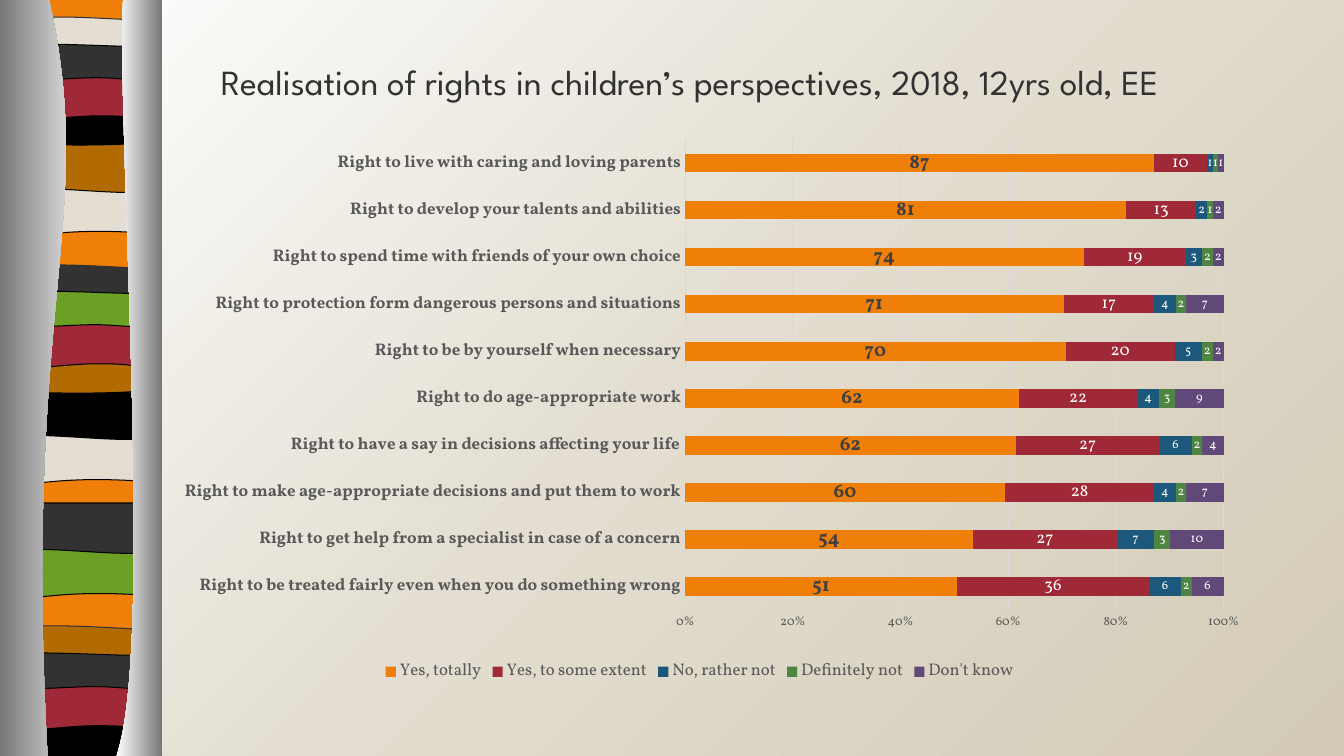
import pptx
import pptx.chart.data
import pptx.dml.color
import pptx.enum.chart
import pptx.enum.shapes
import pptx.enum.text
import pptx.oxml
import pptx.oxml.ns
import pptx.util

Pt = pptx.util.Pt
qn = pptx.oxml.ns.qn
ORANGE, SAND, CHARCOAL, RED = "F07F09", "E3DED1", "323232", "9F2936"
BLACK, BROWN, GREEN, GREY, WHITE = "000000", "B26B02", "6B9F25", "767676", "FFFFFF"
TEXT, GRID = "595959", "D9D9D9"

PROFILES = {
    "dip": [(108, 0), (108, 0, 108, 34, 108, 34), (33, 28, 18, 40, 0, 34), (0, 0)],
    "swell": [(108, 0), (108, 34), (90, 40, 33, 30, 0, 34), (0, 0)],
    "thin": [(108, 3.6), (108, 21), (90, 24, 18, 24, 0, 21), (0, 3.6),
             (7, 0, 24, 0.7, 42, 0.7), (60, 0.7, 94, 2.9, 108, 3.6)],
    "lens": [(108, 0), (108, 24), (90, 27.5, 18, 27.5, 0, 24), (0, 0),
             (66, 3.6, 86, 0, 108, 0)],
    "arch": [(108, 0), (108, 0, 108, 34, 108, 34), (91, 29.5, 84, 29.5, 66, 29.5),
             (48, 29.5, 17, 34, 0, 34), (0, 0)],
    "ripple": [(108, 3.6), (108, 26), (101, 29.5, 84, 26, 66, 26),
               (49, 26, 11.5, 29.5, 0, 26), (0, 3.6), (16, 0, 73, 3.6, 91, 3.6),
               (109, 3.6, 104, 3.6, 108, 3.6)],
    "foot": [(108, 0), (108, 27), (1.4, 27), (0, 0), (66, 3.6, 86, 0, 108, 0)],
    "base": [(108, 0), (108, 538.5), (0, 538.5), (0, 0)],
}
BANDS = [
    ("base", 2.9, -0.7, ORANGE), ("dip", 2.9, 133, SAND), ("swell", 2.9, 101.5, BROWN),
    ("thin", 2.9, 11.5, SAND), ("lens", 2.9, 77, BLACK), ("arch", 2.9, 53.3, RED),
    ("ripple", 2.9, 29.5, CHARCOAL), ("dip", 1.4, 310.3, SAND),
    ("swell", 1.4, 277.9, BLACK), ("thin", 1.4, 188.6, CHARCOAL),
    ("lens", 1.4, 254.2, BROWN), ("arch", 1.4, 230.4, RED),
    ("ripple", 1.4, 205.9, GREEN), ("dip", 2.9, 391.7, GREEN),
    ("swell", 2.9, 359.3, CHARCOAL), ("thin", 1.4, 446.4, BROWN),
    ("foot", 1.4, 512.6, BLACK), ("arch", 1.4, 488.9, RED),
    ("ripple", 1.4, 464.4, CHARCOAL),
]
LEFT_EDGE = [(35, -0.7), (70, 156, 16, 213, 34, 540), (0, 540), (-0.7, -0.7)]
RIGHT_EDGE = [(88, -0.7), (83, 90, 111, 466, 83, 540), (116, 540), (116, 0)]

RIGHTS = [
    "Right to be treated fairly even when you do something wrong",
    "Right to get help from a specialist in case of a concern",
    "Right to make age-appropriate decisions and put them to work",
    "Right to have a say in decisions affecting your life",
    "Right to do age-appropriate work",
    "Right to be by yourself when necessary",
    "Right to protection form dangerous persons and situations",
    "Right to spend time with friends of your own choice",
    "Right to develop your talents and abilities",
    "Right to live with caring and loving parents",
]
ANSWERS = [
    ("Yes, totally", [51, 54, 60, 62, 62, 70, 71, 74, 81, 87], ORANGE, 14, "404040", True),
    ("Yes, to some extent", [36, 27, 28, 27, 22, 20, 17, 19, 13, 10], RED, 12, WHITE, False),
    ("No, rather not", [6, 7, 4, 6, 4, 5, 4, 3, 2, 1], "1B587C", 9, WHITE, False),
    ("Definitely not", [2, 3, 2, 2, 3, 2, 2, 2, 1, 1], "4E8542", 9, WHITE, False),
    ("Don't know", [6, 10, 7, 4, 9, 2, 7, 2, 2, 1], "604878", 9, WHITE, False),
]


def rgb(value):
    return pptx.dml.color.RGBColor.from_string(value)


class Deck:
    heading_font = "League Spartan"
    body_font = "Vollkorn"

    def __init__(self, prs):
        self.master_tree = prs.slide_master.shapes._spTree
        self.shapes = prs.slides.add_slide(prs.slide_layouts[5]).shapes

    def style(self, font, size, color, bold=False, name=None):
        font.name = name or self.body_font
        font.size = Pt(size)
        font.bold = bold
        font.color.rgb = rgb(color)

    def to_master(self, sp, position):
        self.master_tree.insert(2 + position, sp._element)

    def outline(self, group, outline, x=0, y=0):
        points = [(Pt(x + seg[i]), Pt(y + seg[i + 1]))
                  for seg in outline for i in range(0, len(seg), 2)]
        builder = group.shapes.build_freeform(*points[0], scale=1.0)
        builder.add_line_segments(points[1:], close=True)
        sp = builder.convert_to_shape()
        sp.shadow.inherit = False
        lines = iter(list(sp._element.iter(qn("a:lnTo"))))
        for seg in outline[1:]:
            parts = [next(lines) for _ in range(len(seg) // 2)]
            if len(parts) == 3:
                curve = pptx.oxml.parse_xml(f'<a:cubicBezTo {pptx.oxml.ns.nsdecls("a")}/>')
                parts[0].addprevious(curve)
                for part in parts:
                    curve.append(part[0])
                    part.getparent().remove(part)
        return sp

    def band(self, group, profile, x, y, color):
        sp = self.outline(group, PROFILES[profile], x, y)
        sp.fill.solid()
        sp.fill.fore_color.rgb = rgb(color)
        sp.line.color.rgb = rgb(CHARCOAL if profile == "thin" else BLACK)
        sp.line.width = Pt(0.75)

    def edge(self, group, outline, start, end):
        sp = self.outline(group, outline)
        sp.line.fill.background()
        sp.fill.gradient()
        sp.fill.gradient_angle = 0
        for stop, color in zip(sp.fill.gradient_stops, (start, end)):
            stop.color.rgb = rgb(color)

    def ribbon(self):
        group = self.shapes.add_group_shape()
        for band in BANDS:
            self.band(group, *band)
        self.edge(group, LEFT_EDGE, GREY, WHITE)
        self.edge(group, RIGHT_EDGE, WHITE, GREY)
        self.to_master(group, 1)

    def backdrop(self, width, height, stops):
        sp = self.shapes.add_shape(
            pptx.enum.shapes.MSO_SHAPE.RECTANGLE, 0, 0, width, height)
        sp.shadow.inherit = False
        sp.line.fill.background()
        sp.fill.gradient()
        gs = "".join(f'<a:gs pos="{pos * 1000}"><a:srgbClr val="{color}"/></a:gs>'
                     for pos, color in stops)
        grad = pptx.oxml.parse_xml(
            f'<a:gradFill {pptx.oxml.ns.nsdecls("a")} rotWithShape="1"><a:gsLst>{gs}</a:gsLst>'
            '<a:path path="circle"><a:fillToRect l="100000" t="100000"/></a:path></a:gradFill>')
        spPr = sp._element.spPr
        spPr.replace(spPr.find(qn("a:gradFill")), grad)
        self.to_master(sp, 0)

    def title(self, text, x, y, w, h):
        sp = self.shapes.title
        sp.left, sp.top, sp.width, sp.height = Pt(x), Pt(y), Pt(w), Pt(h)
        tf = sp.text_frame
        tf.text = text
        tf.word_wrap = True
        tf.vertical_anchor = pptx.enum.text.MSO_ANCHOR.MIDDLE
        p = tf.paragraphs[0]
        p.alignment = pptx.enum.text.PP_ALIGN.LEFT
        self.style(p.font, 25.2, CHARCOAL, name=self.heading_font)

    def chart(self, x, y, w, h, layout):
        enum = pptx.enum.chart
        data = pptx.chart.data.CategoryChartData(number_format="###0")
        data.categories = RIGHTS
        for name, values, *_ in ANSWERS:
            data.add_series(name, values)
        chart = self.shapes.add_chart(
            enum.XL_CHART_TYPE.BAR_STACKED_100, Pt(x), Pt(y), Pt(w), Pt(h), data).chart
        self.style(chart.font, 10, BLACK)
        chart.has_title = False
        chart.has_legend = True
        chart.legend.position = enum.XL_LEGEND_POSITION.BOTTOM
        chart.legend.include_in_layout = False
        self.style(chart.legend.font, 12, TEXT)
        for axis, size, bold in ((chart.category_axis, 12, True), (chart.value_axis, 9, False)):
            axis.major_tick_mark = axis.minor_tick_mark = enum.XL_TICK_MARK.NONE
            self.style(axis.tick_labels.font, size, TEXT, bold)
        values = chart.value_axis
        values.major_unit = 0.2
        values.has_major_gridlines = True
        values.tick_labels.number_format = "0%"
        values.tick_labels.number_format_is_linked = False
        values.format.line.fill.background()
        for line in (chart.category_axis.format.line, values.major_gridlines.format.line):
            line.color.rgb = rgb(GRID)
            line.width = Pt(0.75)
        plot = chart.plots[0]
        plot.gap_width, plot.overlap, plot.vary_by_categories = 150, 100, False
        for series, (_, _, fill, size, color, bold) in zip(plot.series, ANSWERS):
            series.format.fill.solid()
            series.format.fill.fore_color.rgb = rgb(fill)
            labels = series.data_labels
            labels.show_value = True
            labels.position = enum.XL_LABEL_POSITION.CENTER
            labels.number_format = "###0"
            labels.number_format_is_linked = False
            self.style(labels.font, size, color, bold)
        area = chart._chartSpace.chart.plotArea
        for old in area.findall(qn("c:layout")):
            area.remove(old)
        places = "".join(f'<c:{tag} val="{val}"/>' for tag, val in zip("xywh", layout))
        area.insert(0, pptx.oxml.parse_xml(
            f'<c:layout {pptx.oxml.ns.nsdecls("c")}><c:manualLayout>'
            '<c:layoutTarget val="inner"/><c:xMode val="edge"/><c:yMode val="edge"/>'
            f'{places}</c:manualLayout></c:layout>'))


def main():
    prs = pptx.Presentation()
    prs.slide_width, prs.slide_height = Pt(960), Pt(540)
    deck = Deck(prs)
    deck.backdrop(prs.slide_width, prs.slide_height, [(0, "D3CBB6"), (50, SAND), (100, WHITE)])
    deck.ribbon()
    deck.title("Realisation of rights in children’s perspectives, 2018, 12yrs old, EE",
               150.5, 21.6, 787, 73.4)
    deck.chart(107.3, 87.1, 784.8, 403.9, (0.487, 0.031, 0.49, 0.832))
    prs.save("out.pptx")


if __name__ == "__main__":
    main()
